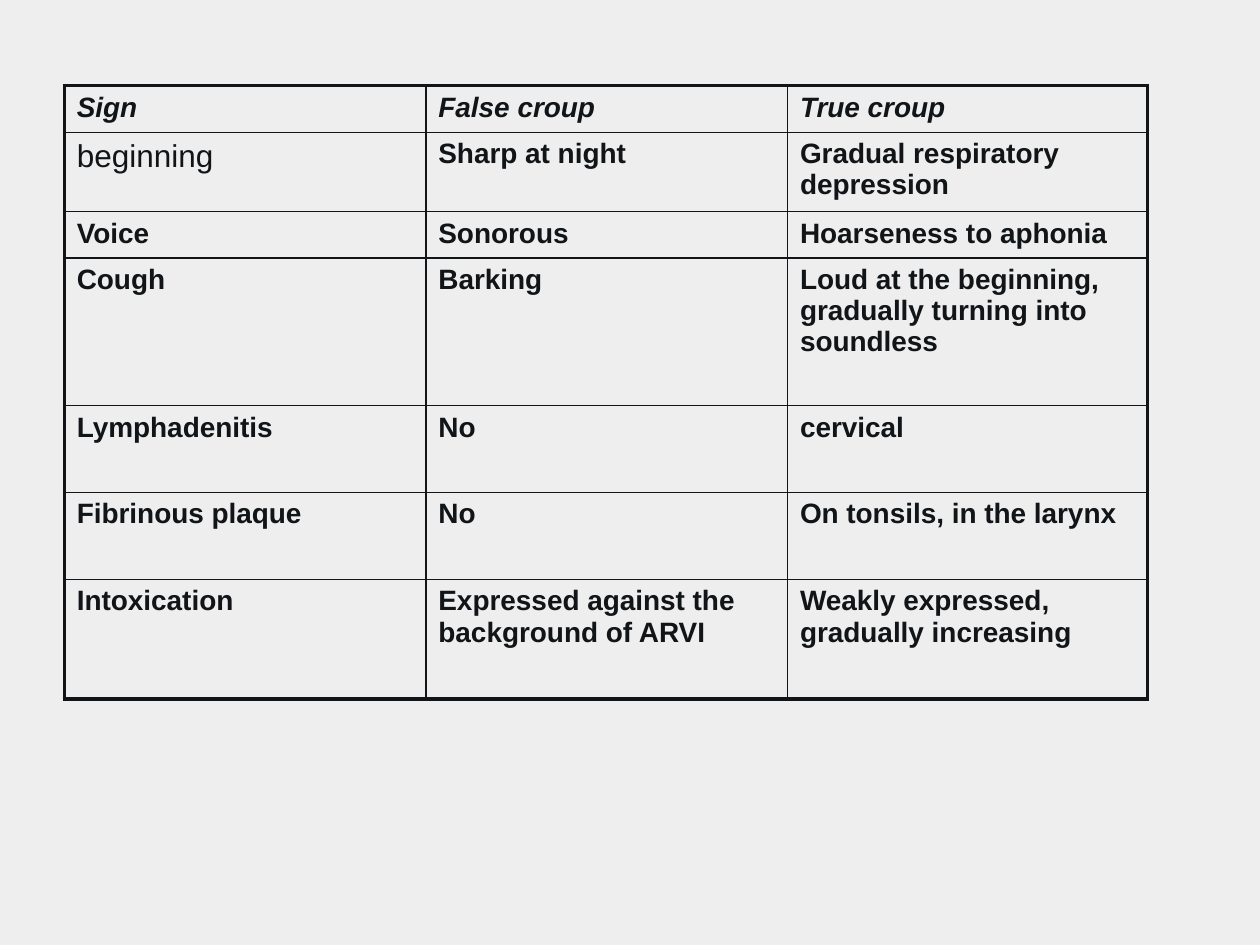
from lxml import etree
from pptx import Presentation
from pptx.dml.color import RGBColor
from pptx.oxml.ns import qn
from pptx.util import Inches, Pt

INK = "111518"
PAPER = "EEEEEE"
FONT = "Arial"
THIN, THICK = 1, 2.25
LEFT, TOP = 0.51, 0.68
COLS = [2.87, 2.87, 2.86]
ROWS = [0.37, 0.63, 0.37, 1.17, 0.69, 0.69, 0.95]
SIGNS = [
    ("Sign", "False croup", "True croup"),
    ("beginning", "Sharp at night", "Gradual respiratory depression"),
    ("Voice", "Sonorous", "Hoarseness to aphonia"),
    ("Cough", "Barking",
     "Loud at the beginning, gradually turning into soundless"),
    ("Lymphadenitis", "No", "cervical"),
    ("Fibrinous plaque", "No", "On tonsils, in the larynx"),
    ("Intoxication", "Expressed against the background of ARVI",
     "Weakly expressed, gradually increasing"),
]


def color(code):
    return RGBColor.from_string(code)


def add_text(cell, text, size=16, bold=True, italic=False):
    run = cell.text_frame.paragraphs[0].add_run()
    run.text = text
    font = run.font
    font.name, font.size = FONT, Pt(size)
    font.bold, font.italic = bold, italic
    font.color.rgb = color(INK)


def add_edge(cell, side, width):
    """Draw one cell border; side is L, R, T or B, in that order."""
    props = cell._tc.get_or_add_tcPr()
    line = etree.SubElement(props, qn(f"a:ln{side}"), w=str(Pt(width)))
    fill = etree.SubElement(line, qn("a:solidFill"))
    etree.SubElement(fill, qn("a:srgbClr"), val=INK)


def frame_cell(cell, row, col):
    """Thick lines on the table's outer edge, thin ones inside."""
    outer = {
        "L": col == 0,
        "R": col == len(COLS) - 1,
        "T": row == 0,
        "B": row == len(ROWS) - 1,
    }
    for side, thick in outer.items():
        add_edge(cell, side, THICK if thick else THIN)
    cell.fill.background()


def text_style(row, col):
    if row == 0:
        return {"italic": True}
    if (row, col) == (1, 0):
        return {"size": 18, "bold": False}
    return {}


def add_signs(slide):
    frame = slide.shapes.add_table(
        len(ROWS), len(COLS), Inches(LEFT), Inches(TOP),
        Inches(sum(COLS)), Inches(sum(ROWS)))
    table = frame.table
    table.first_row = table.horz_banding = False
    for column, width in zip(table.columns, COLS):
        column.width = Inches(width)
    for line, height in zip(table.rows, ROWS):
        line.height = Inches(height)
    for row, texts in enumerate(SIGNS):
        for col, text in enumerate(texts):
            cell = table.cell(row, col)
            frame_cell(cell, row, col)
            add_text(cell, text, **text_style(row, col))


def main():
    deck = Presentation()
    deck.slide_width, deck.slide_height = Inches(10), Inches(7.5)
    slide = deck.slides.add_slide(deck.slide_layouts[6])
    back = slide.background.fill
    back.solid()
    back.fore_color.rgb = color(PAPER)
    add_signs(slide)
    deck.save("out.pptx")


if __name__ == "__main__":
    main()
